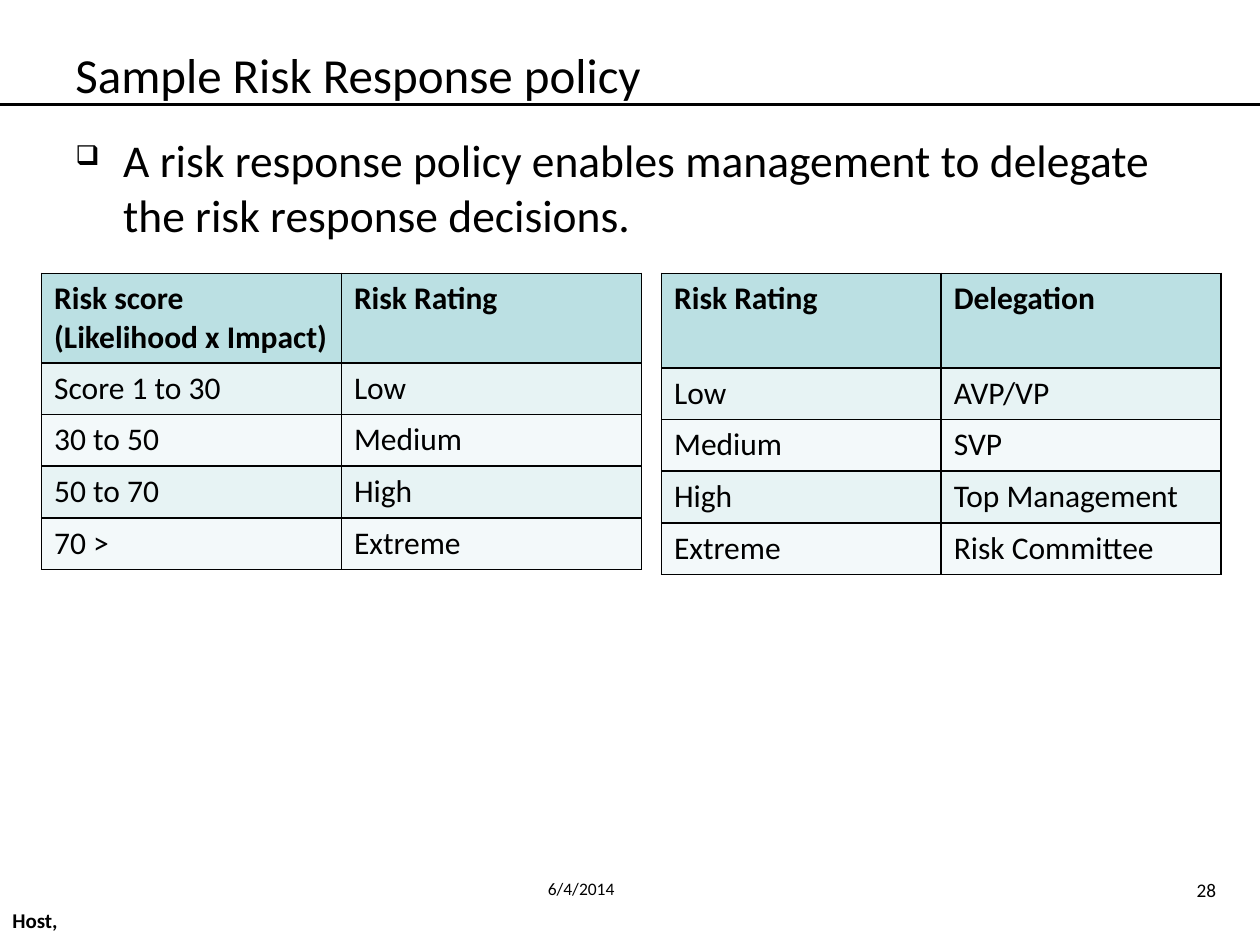
"""Build the sample risk response policy slide."""
from lxml import etree
from pptx import Presentation
from pptx.dml.color import RGBColor
from pptx.enum import shapes, text
from pptx.oxml import ns
from pptx.util import Inches, Pt

FONT = "Calibri"
BLACK = RGBColor(0, 0, 0)
HEADER = RGBColor(0xBB, 0xE0, 0xE3)
BANDS = [RGBColor(0xE7, 0xF3, 0xF4), RGBColor(0xF3, 0xF9, 0xFA)]

TOP, MIDDLE = text.MSO_ANCHOR.TOP, text.MSO_ANCHOR.MIDDLE
LEFT, RIGHT = text.PP_ALIGN.LEFT, text.PP_ALIGN.RIGHT

BULLET = "❑"
POLICY = "A risk response policy enables management to delegate the risk response decisions."
LABELS = [
    ("28", (9, 6.92, 0.75, 0.28), 11, False, TOP, RIGHT),
    ("Host,", (0, 7.1, 4.33, 0.4), 12, True, MIDDLE, LEFT),
    ("Sample Risk Response policy", (0.5, 0.25, 9, 0.67), 28, False, MIDDLE, LEFT),
    ("6/4/2014", (4.25, 6.92, 1.33, 0.33), 10, False, TOP, LEFT),
]
TABLE_TOP, ROW_HEIGHT = 2.17, 0.41
TABLES = [
    (0.33, 2.38, 0.71, [
        ("Risk score\n(Likelihood x Impact)", "Risk Rating"),
        ("Score 1 to 30", "Low"),
        ("30 to 50", "Medium"),
        ("50 to 70", "High"),
        ("70 >", "Extreme"),
    ]),
    (5.25, 2.22, 0.75, [
        ("Risk Rating", "Delegation"),
        ("Low", "AVP/VP"),
        ("Medium", "SVP"),
        ("High", "Top Management"),
        ("Extreme", "Risk Committee"),
    ]),
]


def style(tf, size, bold=False, align=LEFT):
    for p in tf.paragraphs:
        p.alignment = align
        for r in p.runs:
            r.font.name, r.font.size, r.font.bold = FONT, Pt(size), bold
            r.font.color.rgb = BLACK


def add_text(s, words, box, size, bold=False, anchor=TOP, align=LEFT):
    tf = s.shapes.add_textbox(*map(Inches, box)).text_frame
    tf.word_wrap, tf.vertical_anchor = True, anchor
    tf.text = words
    style(tf, size, bold, align)
    return tf


def add_bullet(p):
    pPr = p._p.get_or_add_pPr()
    pPr.set("marL", str(Inches(0.38)))
    pPr.set("indent", str(Inches(-0.38)))
    etree.SubElement(pPr, ns.qn("a:buSzPct")).set("val", "60000")
    etree.SubElement(pPr, ns.qn("a:buChar")).set("char", BULLET)


def add_borders(cell):
    tcPr = cell._tc.get_or_add_tcPr()
    for i, side in enumerate(("lnL", "lnR", "lnT", "lnB")):
        ln = etree.Element(ns.qn("a:" + side), w=str(Pt(1)))
        fill = etree.SubElement(ln, ns.qn("a:solidFill"))
        etree.SubElement(fill, ns.qn("a:srgbClr")).set("val", str(BLACK))
        tcPr.insert(i, ln)


def add_grid(s, left, col_width, header_height, rows):
    heights = [header_height] + [ROW_HEIGHT] * (len(rows) - 1)
    cols = len(rows[0])
    table = s.shapes.add_table(
        len(rows), cols, Inches(left), Inches(TABLE_TOP),
        Inches(col_width * cols), Inches(sum(heights))).table
    for col in table.columns:
        col.width = Inches(col_width)
    for i, (height, row) in enumerate(zip(heights, rows)):
        table.rows[i].height = Inches(height)
        for j, words in enumerate(row):
            cell = table.cell(i, j)
            cell.text = words
            style(cell.text_frame, 18, bold=i == 0)
            cell.fill.solid()
            cell.fill.fore_color.rgb = BANDS[(i - 1) % 2] if i else HEADER
            add_borders(cell)


def main():
    prs = Presentation()
    prs.slide_width, prs.slide_height = Inches(10), Inches(7.5)
    s = prs.slides.add_slide(prs.slide_layouts[6])

    rule = s.shapes.add_connector(
        shapes.MSO_CONNECTOR.STRAIGHT, 0, Inches(0.83), Inches(10), Inches(0.83))
    rule.line.color.rgb, rule.line.width = BLACK, Pt(1.5)
    etree.SubElement(rule._element.spPr, ns.qn("a:effectLst"))

    for label in LABELS:
        add_text(s, *label)
    tf = add_text(s, POLICY, (0.5, 1, 9, 5.7), 26)
    add_bullet(tf.paragraphs[0])
    for grid in TABLES:
        add_grid(s, *grid)
    prs.save("out.pptx")


if __name__ == "__main__":
    main()
